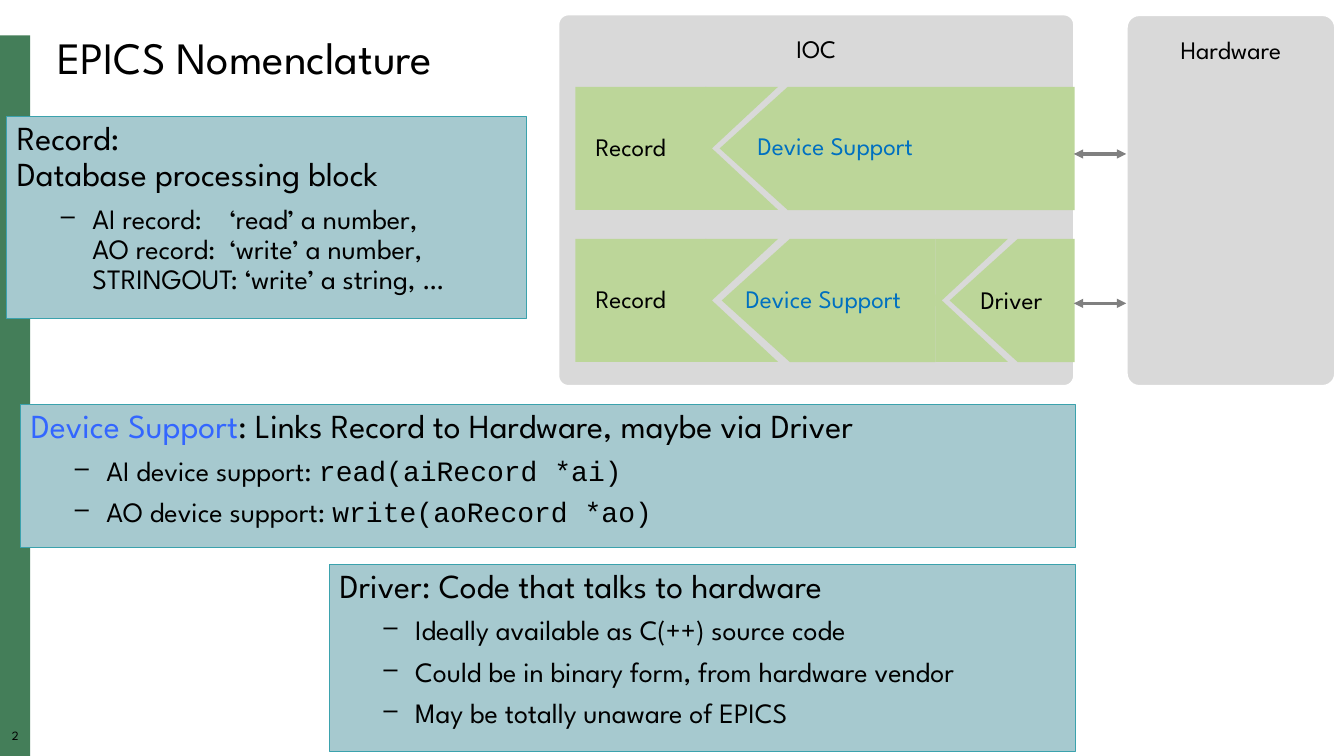
"""Build the EPICS Nomenclature slide: definitions beside an IOC diagram."""
from lxml import etree
from pptx import Presentation
from pptx.dml.color import RGBColor
from pptx.enum.shapes import MSO_CONNECTOR, MSO_SHAPE
from pptx.enum.text import MSO_ANCHOR, PP_ALIGN
from pptx.oxml import parse_xml
from pptx.oxml.ns import nsdecls, qn
from pptx.util import Pt

RECT, ROUNDED = MSO_SHAPE.RECTANGLE, MSO_SHAPE.ROUNDED_RECTANGLE
PENTAGON, TRIANGLE = MSO_SHAPE.PENTAGON, MSO_SHAPE.RIGHT_TRIANGLE
STRAIGHT = MSO_CONNECTOR.STRAIGHT
LEFT, CENTER = PP_ALIGN.LEFT, PP_ALIGN.CENTER
TOP, MIDDLE = MSO_ANCHOR.TOP, MSO_ANCHOR.MIDDLE
BODY_FONT, CODE_FONT = "League Spartan", "Courier New"
BLACK, WHITE, GRAY, ARROW_GRAY = "000000", "FFFFFF", "D9D9D9", "808080"
STRIP_GREEN, BLOCK_GREEN = "447E59", "BCD699"
PANEL_FILL, PANEL_LINE = "A6C9CF", "3BA2AD"
LINK_BLUE, LABEL_BLUE = "3366FF", "0070C0"
rgb = RGBColor.from_string

prs = Presentation()
prs.slide_width, prs.slide_height = Pt(960), Pt(540)
slide = prs.slides.add_slide(prs.slide_layouts[6])
shapes = slide.shapes


def add_block(kind, box, fill, line=None, line_width=0.75):
    """Add a flat filled shape, outlined when a line colour is given."""
    block = shapes.add_shape(kind, *map(Pt, box))
    block.shadow.inherit = False
    block.fill.solid()
    block.fill.fore_color.rgb = rgb(fill)
    if line:
        block.line.color.rgb = rgb(line)
        block.line.width = Pt(line_width)
    else:
        block.line.fill.background()
    return block


def write(holder, text, size, color=BLACK, align=LEFT, anchor=TOP, inset=None):
    """Write one paragraph into a shape or text box."""
    frame = holder.text_frame
    frame.word_wrap = True
    frame.vertical_anchor = anchor
    if inset is not None:
        frame.margin_left = frame.margin_right = Pt(inset)
        frame.margin_top = frame.margin_bottom = Pt(inset)
    frame.text = text
    paragraph = frame.paragraphs[0]
    paragraph.alignment = align
    paragraph.line_spacing = 0.9
    font = paragraph.runs[0].font
    font.size, font.name = Pt(size), BODY_FONT
    font.color.rgb = rgb(color)


add_block(RECT, (0, 25.2, 21.6, 514.8), STRIP_GREEN)
page_number = shapes.add_textbox(0, Pt(521.5), Pt(22), Pt(12))
write(page_number, "2", 9, align=CENTER, inset=0)
title = shapes.add_textbox(Pt(33.8), Pt(21.6), Pt(900), Pt(42.5))
write(title, "EPICS Nomenclature", 32, anchor=MIDDLE)

panels = [
    ((5, 83, 371, 144.5),
     [("Record:\vDatabase processing block", BODY_FONT, BLACK)],
     [[("AI record:\t‘read’ a number,\vAO record:\t‘write’ a number,\v"
        "STRINGOUT: ‘write’ a string, …", BODY_FONT)]]),
    ((15, 289, 753, 102),
     [("Device Support", BODY_FONT, LINK_BLUE),
      (": Links Record to Hardware, maybe via Driver", BODY_FONT, BLACK)],
     [[("AI device support: ", BODY_FONT), ("read(aiRecord *ai)", CODE_FONT)],
      [("AO device support: ", BODY_FONT), ("write(aoRecord *ao)", CODE_FONT)]]),
    ((235.5, 403, 532.5, 133.5),
     [("Driver: Code that talks to hardware", BODY_FONT, BLACK)],
     [[("Ideally available as C(++) source code", BODY_FONT)],
      [("Could be in binary form, from hardware vendor", BODY_FONT)],
      [("May be totally unaware of EPICS", BODY_FONT)]]),
]
for box, heading, points in panels:
    frame = add_block(RECT, box, PANEL_FILL, PANEL_LINE).text_frame
    frame.word_wrap = True
    frame.vertical_anchor = TOP
    for index, pieces in enumerate([heading] + points):
        paragraph = frame.add_paragraph() if index else frame.paragraphs[0]
        paragraph.alignment = LEFT
        paragraph.line_spacing = 0.9
        if index:
            paragraph.level = 1
            paragraph.space_before = Pt(8)
            props = paragraph._p.get_or_add_pPr()
            props.set("marL", str(Pt(54)))
            props.set("indent", str(-Pt(22.5)))
            for bullet in (
                f'<a:buClr {nsdecls("a")}><a:srgbClr val="{BLACK}"/></a:buClr>',
                f'<a:buSzPct {nsdecls("a")} val="90000"/>',
                f'<a:buChar {nsdecls("a")} char="–"/>',
            ):
                props.append(parse_xml(bullet))
            if "\t" in pieces[0][0]:
                tabs = etree.SubElement(props, qn("a:tabLst"))
                etree.SubElement(tabs, qn("a:tab"), pos=str(Pt(152)), algn="l")
        paragraph.text = pieces[0][0]
        for piece in pieces[1:]:
            paragraph.add_run().text = piece[0]
        styles = pieces if len(pieces) > 1 else pieces * len(paragraph.runs)
        for run, (_, font_name, *color) in zip(paragraph.runs, styles):
            run.font.size = Pt(20 if index else 24)
            run.font.name = font_name
            run.font.color.rgb = rgb(color[0] if color else BLACK)

for name, box, corner in (
    ("IOC", (398, 9.5, 370, 267), 0.03),
    ("Hardware", (804, 10, 150.5, 266.5), 0.065),
):
    container = add_block(ROUNDED, box, GRAY, WHITE, 3)
    container.adjustments[0] = corner
    write(container, name, 18, align=CENTER, inset=14.4)

ROW_HEIGHT, NOTCH_WIDTH, NOTCH_HEIGHT = 88, 51.8, 48.2
turn_shift = (NOTCH_WIDTH - NOTCH_HEIGHT) / 2
chains = [
    (62, [(514, 253.5)], [504],
     [("Device Support", 534.2, 92, 150, LABEL_BLUE)], 110),
    (170.6, [(515.5, 152.6), (678.3, 89.3)], [504, 668.2],
     [("Device Support", 525.6, 201, 150, LABEL_BLUE),
      ("Driver", 693.4, 202.3, 70, BLACK)], 216.7),
]
for top, pentagons, notches, labels, arrow_y in chains:
    record = add_block(RECT, (411, top, 93.5, ROW_HEIGHT), BLOCK_GREEN)
    write(record, "Record", 18, anchor=MIDDLE, inset=14.4)
    for left, width in pentagons:
        pentagon = add_block(PENTAGON, (left, top, width, ROW_HEIGHT), BLOCK_GREEN)
        pentagon.rotation = 180
        pentagon.adjustments[0] = 0.553
    for left in notches:
        add_block(TRIANGLE, (left, top + ROW_HEIGHT - NOTCH_HEIGHT,
                             NOTCH_WIDTH, NOTCH_HEIGHT), BLOCK_GREEN)
        upper = add_block(TRIANGLE, (left + turn_shift, top - turn_shift,
                                     NOTCH_HEIGHT, NOTCH_WIDTH), BLOCK_GREEN)
        upper.rotation = 90
    for text, left, label_top, width, color in labels:
        label = shapes.add_textbox(Pt(left), Pt(label_top), Pt(width), Pt(26.6))
        write(label, text, 18, color)
    arrow = shapes.add_connector(STRAIGHT, Pt(804.5), Pt(arrow_y), Pt(767), Pt(arrow_y))
    arrow.line.color.rgb = rgb(ARROW_GRAY)
    arrow.line.width = Pt(2.25)
    for end in ("a:headEnd", "a:tailEnd"):
        etree.SubElement(arrow.line._get_or_add_ln(), qn(end), type="triangle")
    etree.SubElement(arrow._element.spPr, qn("a:effectLst"))

prs.save("out.pptx")
